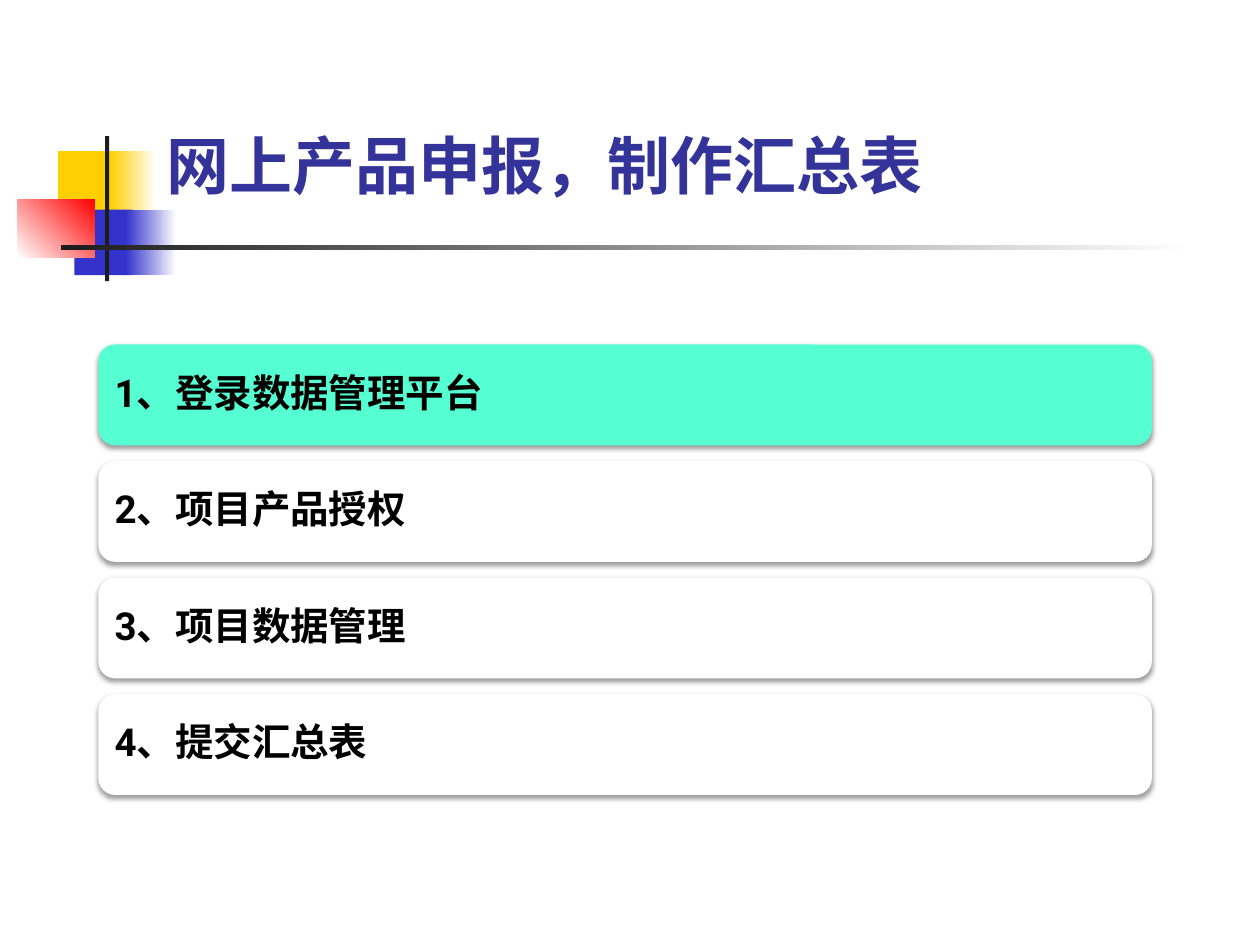
from lxml import etree
from pptx import Presentation
from pptx.dml.color import RGBColor
from pptx.enum.shapes import MSO_SHAPE
from pptx.enum.text import MSO_ANCHOR
from pptx.oxml import parse_xml
from pptx.oxml.ns import nsdecls, qn
from pptx.util import Pt

WHITE = RGBColor(0xFF, 0xFF, 0xFF)
BLACK = RGBColor(0x00, 0x00, 0x00)
YELLOW = RGBColor(0xFF, 0xCF, 0x01)
BLUE = RGBColor(0x33, 0x33, 0xCC)
RED = RGBColor(0xFF, 0x00, 0x00)
CHARCOAL = RGBColor(0x1C, 0x1C, 0x1C)
MINT = RGBColor(0x56, 0xFF, 0xD2)
TITLE_BLUE = RGBColor(0x33, 0x33, 0x99)
CJK_FONT = "Noto Sans CJK SC"

presentation = Presentation()
presentation.slide_width = Pt(720)
presentation.slide_height = Pt(540)
slide = presentation.slides.add_slide(presentation.slide_layouts[6])


def add_block(kind, left, top, width, height, colors, angle=0):
    shape = slide.shapes.add_shape(kind, Pt(left), Pt(top), Pt(width), Pt(height))
    shape.shadow.inherit = False
    shape.line.fill.background()
    if len(colors) == 1:
        shape.fill.solid()
        shape.fill.fore_color.rgb = colors[0]
    else:
        shape.fill.gradient()
        shape.fill.gradient_angle = angle
        for stop, color in zip(shape.fill.gradient_stops, colors):
            stop.color.rgb = color
    return shape


def add_text(text, left, top, width, height, font_name, size, color):
    box = slide.shapes.add_textbox(Pt(left), Pt(top), Pt(width), Pt(height))
    text_frame = box.text_frame
    text_frame.word_wrap = True
    text_frame.vertical_anchor = MSO_ANCHOR.MIDDLE
    text_frame.text = text
    paragraph = text_frame.paragraphs[0]
    font = paragraph.runs[0].font
    font.name = font_name
    font.size = Pt(size)
    font.bold = True
    font.color.rgb = color
    properties = paragraph.runs[0]._r.get_or_add_rPr()
    etree.SubElement(properties, qn("a:ea")).set("typeface", CJK_FONT)
    return text_frame


decorations = [
    (33.2, 86.4, 34.5, 37.5, [YELLOW], 0),
    (63.3, 86.4, 26, 37.5, [YELLOW, WHITE], 0),
    (42.5, 119.8, 33.2, 37.4, [BLUE], 0),
    (72, 119.8, 28.8, 37.4, [BLUE, WHITE], 0),
    (10, 113.8, 44.2, 33.4, [WHITE, RED], 45),
    (60, 77.8, 2.4, 82.8, [CHARCOAL], 0),
    (34.8, 140.2, 648, 2.5, [CHARCOAL, WHITE], 0),
]
for left, top, width, height, colors, angle in decorations:
    add_block(MSO_SHAPE.RECTANGLE, left, top, width, height, colors, angle)

steps = ["1、登录数据管理平台", "2、项目产品授权", "3、项目数据管理", "4、提交汇总表"]
for index, step in enumerate(steps):
    top = 196.9 + index * 66.6
    card = add_block(MSO_SHAPE.ROUNDED_RECTANGLE, 56.2, top, 602, 57.6,
                     [MINT if index == 0 else WHITE])
    card._element.spPr.find(qn("a:effectLst")).append(parse_xml(
        f'<a:outerShdw {nsdecls("a")} blurRad="{Pt(3.1)}" dist="{Pt(1.6)}" '
        'dir="5400000" rotWithShape="0"><a:srgbClr val="000000">'
        '<a:alpha val="38000"/></a:srgbClr></a:outerShdw>'))
    text_frame = add_text(step, 59, top + 2.8, 596.4, 52, "Roboto", 22, BLACK)
    text_frame.margin_left = text_frame.margin_right = Pt(6.6)
    text_frame.margin_top = text_frame.margin_bottom = Pt(6.6)
    text_frame.paragraphs[0].line_spacing = 0.9
    text_frame.paragraphs[0].space_after = Pt(7.7)

add_text("网上产品申报，制作汇总表", 87.8, 49, 613.4, 90, CJK_FONT, 36, TITLE_BLUE)

presentation.save("out.pptx")
